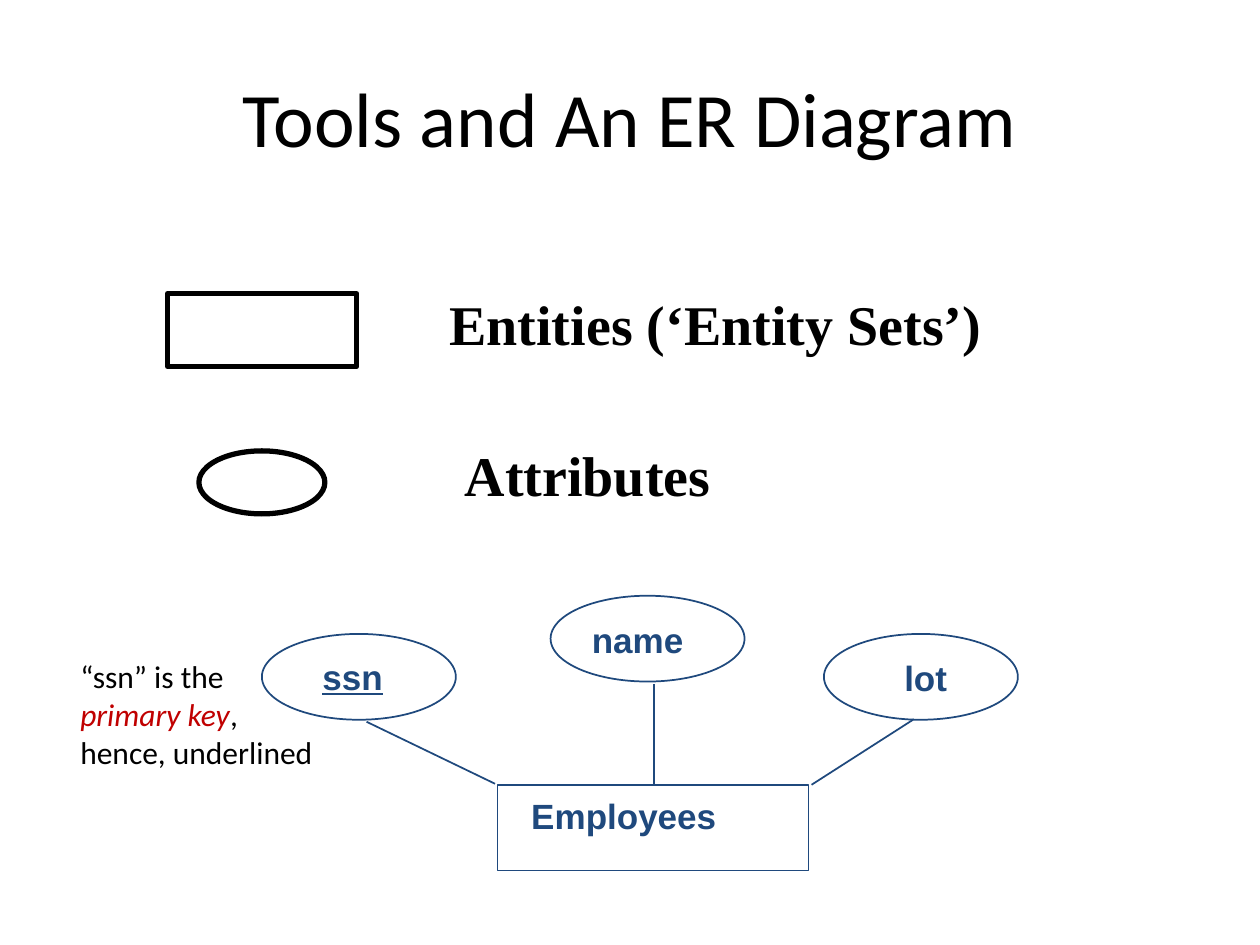
from lxml import etree
from pptx import Presentation
from pptx import util as u
from pptx.dml import color
from pptx.enum import shapes, text
from pptx.oxml import ns

HUES = {"ink": "000000", "blue": "1F497D", "red": "C00000"}
RECT, OVAL = shapes.MSO_SHAPE.RECTANGLE, shapes.MSO_SHAPE.OVAL

deck = Presentation()
deck.slide_width, deck.slide_height = u.Cm(25.4), u.Cm(19.05)
slide = deck.slides.add_slide(deck.slide_layouts[6])
items = slide.shapes


def draw(kind, spot, hue, width):
    """Add an unfilled outline shape."""
    form = items.add_shape(kind, *map(u.Cm, spot))
    form.shadow.inherit = False
    form.fill.background()
    form.line.color.rgb = color.RGBColor.from_string(HUES[hue])
    form.line.width = u.Pt(width)


def write(spot, runs, face, size, **base):
    """Add a text box; each run is (words, changes to the base format)."""
    box = items.add_textbox(*map(u.Cm, spot))
    box.text_frame.word_wrap = True
    para = box.text_frame.paragraphs[0]
    for words, extra in runs:
        look = {"name": face, "size": u.Pt(size), "hue": "ink", **base, **extra}
        for num, part in enumerate(words.split("\n")):
            if num:
                para.add_line_break()
            if not part:
                continue
            run = para.add_run()
            run.text = part
            for key, val in look.items():
                if key == "hue":
                    run.font.color.rgb = color.RGBColor.from_string(HUES[val])
                else:
                    setattr(run.font, key, val)
    return box.text_frame


# Title
head = write((1.27, 0.76, 22.86, 3.18), [("Tools and An ER Diagram", {})],
             "Calibri", 44)
head.vertical_anchor = text.MSO_ANCHOR.MIDDLE
head.paragraphs[0].alignment = text.PP_ALIGN.CENTER

# Legend: symbol and its meaning
legend = [
    (RECT, (3.38, 5.92, 3.81, 1.47), "Entities (‘Entity Sets’)", (8.81, 5.72, 12.9, 1.6)),
    (OVAL, (4.01, 9.09, 2.54, 1.27), "Attributes", (9.12, 8.76, 6.55, 1.6)),
]
for kind, spot, words, place in legend:
    draw(kind, spot, "ink", 3)
    write(place, [(words, {})], "Times New Roman", 32, bold=True)

# Employees entity with its attributes
nodes = [
    (RECT, (10.03, 15.82, 6.27, 1.73), "Employees", (10.46, 15.9, 5.26), False),
    (OVAL, (5.28, 12.78, 3.91, 1.73), "ssn", (6.25, 13.08, 2.13), True),
    (OVAL, (11.1, 12.01, 3.91, 1.73), "name", (11.68, 12.34, 2.92), False),
    (OVAL, (16.61, 12.78, 3.91, 1.73), "lot", (17.98, 13.11, 1.7), False),
]
for kind, spot, words, place, key in nodes:
    draw(kind, spot, "blue", 1)
    write((*place, 1.32), [(words, {})], "Arial", 20,
          bold=True, underline=key, hue="blue")

# Links from the attributes to the entity
links = [
    (7.39, 14.55, 9.98, 15.8),
    (13.18, 13.79, 13.18, 15.8),
    (16.36, 15.82, 18.42, 14.5),
]
for ends in links:
    link = items.add_connector(shapes.MSO_CONNECTOR.STRAIGHT, *map(u.Cm, ends))
    link.line.color.rgb = color.RGBColor.from_string(HUES["blue"])
    link.line.width = u.Pt(1)
    etree.SubElement(link._element.spPr, ns.qn("a:effectLst"))

# Note on the primary key
note = [
    ("“ssn” is the \n", {}),
    ("primary key", {"hue": "red", "italic": True}),
    (", \nhence, underlined", {}),
]
write((1.37, 13.13, 5.26, 2.57), note, "Calibri", 18)

deck.save("out.pptx")
